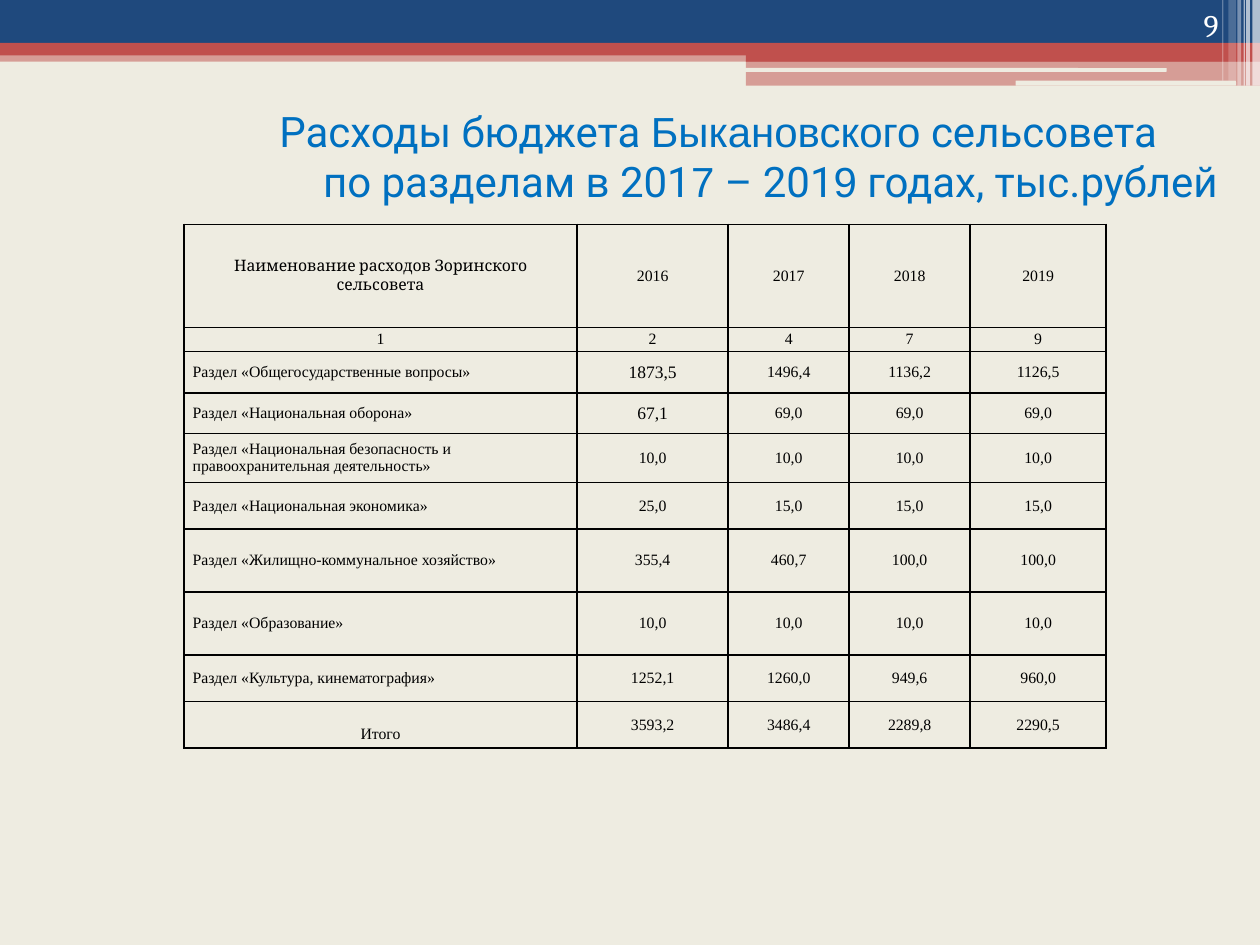
from dataclasses import dataclass

from lxml.etree import SubElement
from pptx import Presentation
from pptx.dml.color import RGBColor
from pptx.enum.shapes import MSO_SHAPE as Shape
from pptx.enum.text import MSO_ANCHOR as Anchor, PP_ALIGN as Align
from pptx.oxml.ns import qn
from pptx.util import Inches, Pt


@dataclass(frozen=True)
class Theme:
    cream: str = "EEECE1"
    navy: str = "1F497D"
    red: str = "C0504D"
    white: str = "FFFFFF"
    black: str = "000000"
    blue: str = "0070C0"
    title: int = 24
    page: int = 18
    cell: int = 9
    large: int = 10
    head: str = "Roboto"
    alt: str = "Arial"
    serif: str = "Cambria"
    body: str = "Times New Roman"


T = Theme()

TITLE = [
    (1.4, [("Расходы бюджета ", T.head), ("Быкановского", T.alt),
           (" сельсовета", T.head)]),
    (2.23, [("по разделам в 201", T.head), ("7", T.alt), (" – 201", T.head),
            ("9", T.alt), (" годах, тыс.рублей", T.head)]),
]
COLS = [3.12, 1.2, 0.96, 0.96, 1.08]
ROWS = [0.82, 0.19, 0.33, 0.32, 0.39, 0.37, 0.5, 0.5, 0.37, 0.37]
DATA = [
    ["Наименование расходов Зоринского\vсельсовета",
     "2016", "2017", "2018", "2019"],
    ["1", "2", "4", "7", "9"],
    ["Раздел «Общегосударственные вопросы»",
     "1873,5", "1496,4", "1136,2", "1126,5"],
    ["Раздел «Национальная оборона»", "67,1", "69,0", "69,0", "69,0"],
    ["Раздел «Национальная безопасность и правоохранительная деятельность»",
     "10,0", "10,0", "10,0", "10,0"],
    ["Раздел «Национальная экономика»", "25,0", "15,0", "15,0", "15,0"],
    ["Раздел «Жилищно-коммунальное хозяйство»",
     "355,4", "460,7", "100,0", "100,0"],
    ["Раздел «Образование»", "10,0", "10,0", "10,0", "10,0"],
    ["Раздел «Культура, кинематография»",
     "1252,1", "1260,0", "949,6", "960,0"],
    ["Итого", "3593,2", "3486,4", "2289,8", "2290,5"],
]
LARGE = {(2, 1), (3, 1)}

# left, top, width, height, colour, opacity in percent
BANDS = [
    (0, 0.4, 10, 0.09, T.red, 50),
    (0, 0, 10, 0.34, T.navy, 100),
    (0, 0.34, 10, 0.1, T.red, 100),
    (5.92, 0.39, 4.08, 0.1, T.red, 100),
    (5.92, 0.48, 4.08, 0.2, T.red, 50),
]
SLITS = [(5.91, 0.54, 3.35, 0.03), (8.06, 0.64, 1.75, 0.04)]
# left, width, height, opacity in percent
STRIPES = [
    (9.94, 0.06, 0.68, 65), (9.89, 0.03, 0.68, 65), (9.87, 0.01, 0.68, 60),
    (9.82, 0.03, 0.68, 40), (9.75, 0.06, 0.64, 20), (9.7, 0.01, 0.64, 30),
]


def write(para, runs, size, color, font=T.body, align=Align.CENTER):
    """Fill a paragraph with a string or with (string, font) runs."""
    para.alignment = align
    for words, face in [(runs, font)] if isinstance(runs, str) else runs:
        for i, line in enumerate(words.split("\v")):
            if i:
                para.add_line_break()
            run = para.add_run()
            run.text = line
            run.font.size = Pt(size)
            run.font.name = face
            run.font.bold = False
            run.font.color.rgb = RGBColor.from_string(color)


def add_bar(slide, box, color, alpha=100, kind=Shape.RECTANGLE):
    bar = slide.shapes.add_shape(kind, *map(Inches, box))
    bar.shadow.inherit = False
    bar.line.fill.background()
    bar.fill.solid()
    bar.fill.fore_color.rgb = RGBColor.from_string(color)
    if alpha < 100:
        tint = bar.fill._xPr.find(qn("a:solidFill"))[0]
        SubElement(tint, qn("a:alpha"), val=str(alpha * 1000))


def add_banner(slide, left, top):
    for x, y, w, h, color, alpha in BANDS:
        add_bar(slide, (left + x, top + y, w, h), color, alpha)
    for x, y, w, h in SLITS:
        add_bar(slide, (left + x, top + y, w, h), T.cream,
                kind=Shape.ROUNDED_RECTANGLE)
    for x, w, h, alpha in STRIPES:
        add_bar(slide, (left + x, top, w, h), T.white, alpha)


def add_title(slide, box):
    title = slide.shapes.title
    title.left, title.top, title.width, title.height = map(Inches, box)
    frame = title.text_frame
    frame.vertical_anchor = Anchor.MIDDLE
    for i, (indent, runs) in enumerate(TITLE):
        para = frame.add_paragraph() if i else frame.paragraphs[0]
        write(para, runs, T.title, T.blue)
        props = para._p.get_or_add_pPr()
        props.set("marL", str(Inches(indent)))
        props.set("indent", "0")
        para.space_before = Pt(0)


def add_page(slide, box):
    frame = slide.shapes.add_textbox(*map(Inches, box)).text_frame
    frame.word_wrap = True
    frame.vertical_anchor = Anchor.BOTTOM
    write(frame.paragraphs[0], "9", T.page, T.white, T.serif, Align.RIGHT)


def add_edges(cell):
    props = cell._tc.get_or_add_tcPr()
    for i, side in enumerate(("lnL", "lnR", "lnT", "lnB")):
        edge = props.makeelement(qn(f"a:{side}"), {"w": str(Pt(1))})
        fill = SubElement(edge, qn("a:solidFill"))
        SubElement(fill, qn("a:srgbClr"), val=T.black)
        props.insert(i, edge)


def add_grid(slide, left, top):
    box = map(Inches, (left, top, sum(COLS), sum(ROWS)))
    table = slide.shapes.add_table(len(ROWS), len(COLS), *box).table
    table.first_row = table.horz_banding = False
    for col, width in zip(table.columns, COLS):
        col.width = Inches(width)
    for row, height in zip(table.rows, ROWS):
        row.height = Inches(height)
    last = len(DATA) - 1
    for r, line in enumerate(DATA):
        for c, words in enumerate(line):
            cell = table.cell(r, c)
            cell.vertical_anchor = Anchor.MIDDLE
            cell.margin_left = cell.margin_right = Inches(0.07)
            total = (r, c) == (last, 0)
            cell.margin_top = Inches(0.14 if total else 0)
            cell.margin_bottom = 0
            cell.fill.background()
            add_edges(cell)
            label = c == 0 and 1 < r < last
            write(cell.text_frame.paragraphs[0], words,
                  T.large if (r, c) in LARGE else T.cell, T.black,
                  font=T.serif if r == c == 0 else T.body,
                  align=Align.LEFT if label else Align.CENTER)


def main():
    deck = Presentation()
    deck.slide_width, deck.slide_height = Inches(10), Inches(7.5)
    slide = deck.slides.add_slide(deck.slide_layouts.get_by_name("Title Only"))
    slide.background.fill.solid()
    slide.background.fill.fore_color.rgb = RGBColor.from_string(T.cream)
    add_banner(slide, 0, 0)
    add_title(slide, (0, 0.84, 10, 0.79))
    add_page(slide, (8.94, 0, 0.83, 0.4))
    add_grid(slide, 1.46, 1.78)
    deck.save("out.pptx")


if __name__ == "__main__":
    main()
